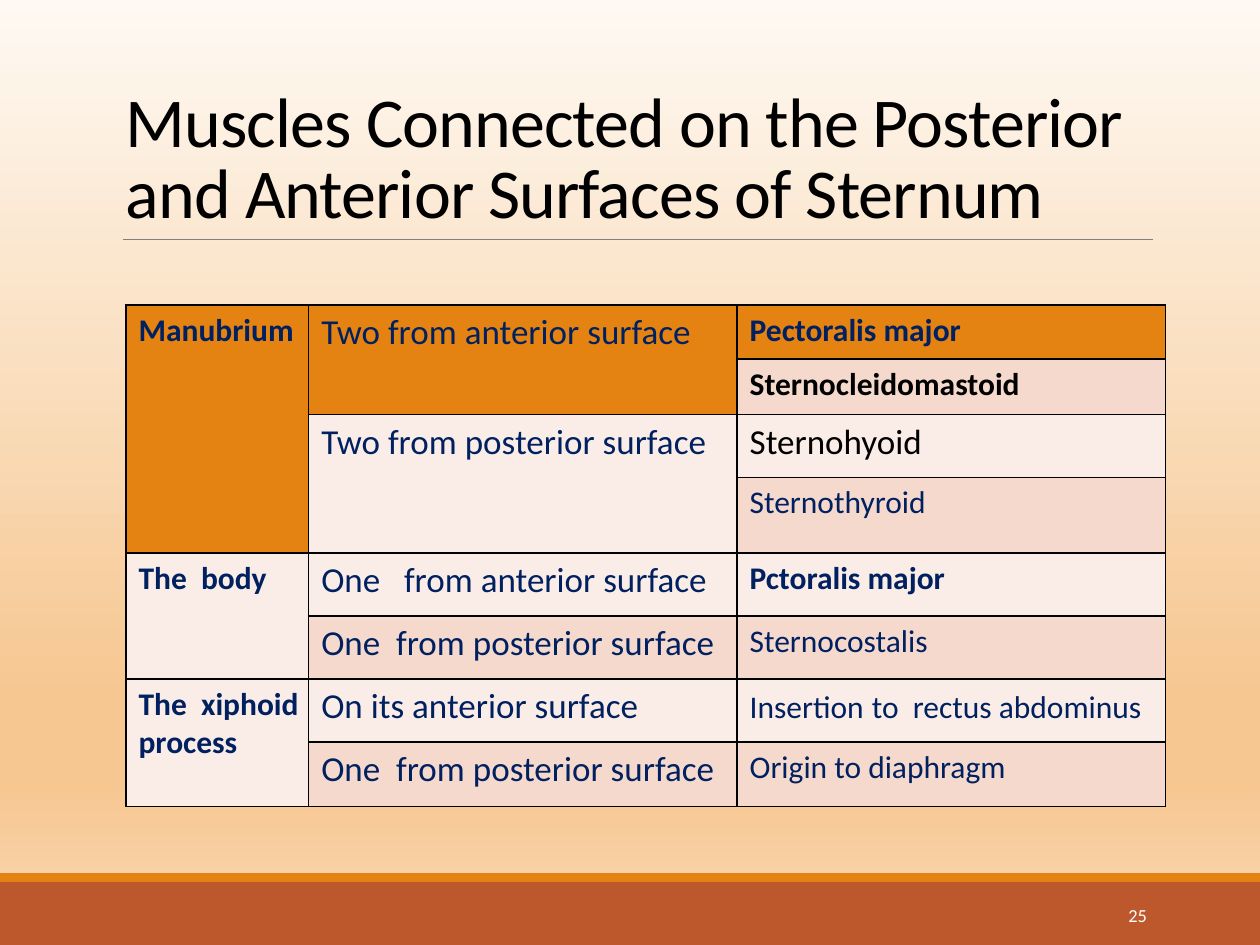
"""Build the slide on the muscles attached to the sternum."""
from pptx import Presentation
from pptx.dml.color import RGBColor as RGB
from pptx.enum.shapes import MSO_CONNECTOR as Link, MSO_SHAPE as Shape
from pptx.enum.text import MSO_ANCHOR as Anchor, PP_ALIGN as Align
from pptx.oxml import parse_xml
from pptx.oxml.ns import nsdecls
from pptx.util import Inches, Pt

NAVY = RGB(0x00, 0x20, 0x60)
BLACK = RGB(0, 0, 0)
WHITE = RGB(255, 255, 255)
GRAY = RGB(0x80, 0x80, 0x80)
RUST = RGB(0xBD, 0x58, 0x2C)
ORANGE = RGB(0xE4, 0x83, 0x12)
PALE = RGB(0xFA, 0xED, 0xE7)
PINK = RGB(0xF5, 0xD9, 0xCC)
FONT = "Calibri"
WIDE, HIGH = 10, 7.5

STOPS = [(0, "FEF9F3"), (74, "F6C791"), (83, "F6C791"), (100, "F9DAB6")]
TITLE = "Muscles Connected on the Posterior and Anterior Surfaces of Sternum"
NUMBER = "25"
BANDS = [(7, 0.5, RUST), (6.93, 0.07, ORANGE)]
COLS = [1.45, 3.4, 3.4]
ROWS = [0.43, 0.44, 0.5, 0.6, 0.5, 0.5, 0.5, 0.51]

PARTS = [
    (0, 4, ORANGE, True, NAVY, [("Manubrium", 18)]),
    (4, 2, PALE, True, NAVY, [("The  body", 18)]),
    (6, 2, PALE, True, NAVY, [("The  xiphoid process", 18)]),
]
SIDES = [
    (0, 2, ORANGE, False, NAVY, [("Two from anterior surface", 20)]),
    (2, 2, PALE, False, NAVY, [("Two from posterior surface", 20)]),
    (4, 1, PALE, False, NAVY, [("One   from anterior surface", 20)]),
    (5, 1, PINK, False, NAVY, [("One  from posterior surface", 20)]),
    (6, 1, PALE, False, NAVY, [("On its anterior surface", 20)]),
    (7, 1, PINK, False, NAVY, [("One  from posterior surface", 20)]),
]
MUSCLES = [
    (0, 1, ORANGE, True, NAVY, [("Pectoralis major", 18)]),
    (1, 1, PINK, True, BLACK, [("Sternocleidomastoid", 18)]),
    (2, 1, PALE, False, BLACK, [("Sternohyoid", 20)]),
    (3, 1, PINK, False, NAVY, [("Sternothyroid", 18)]),
    (4, 1, PALE, True, NAVY, [("Pctoralis major", 18)]),
    (5, 1, PINK, False, NAVY, [("Sternocostalis", 18)]),
    (6, 1, PALE, False, NAVY,
     [("Insertion", 18), (" ", 20), ("to  rectus abdominus", 18)]),
    (7, 1, PINK, False, NAVY, [("Origin to diaphragm", 18)]),
]


def box(*sides):
    return [Inches(side) for side in sides]


def add_run(para, text, size, color, bold=False):
    run = para.add_run()
    run.text = text
    font = run.font
    font.name, font.size, font.bold = FONT, Pt(size), bold
    font.color.rgb = color
    return run


def add_text(slide, place, anchor):
    frame = slide.shapes.add_textbox(*box(*place)).text_frame
    frame.word_wrap = True
    frame.vertical_anchor = anchor
    return frame.paragraphs[0]


def paint_back(slide):
    fill = slide.background.fill
    fill.gradient()
    fill.gradient_angle = 270
    stops = slide.element.xpath(".//a:gsLst")[0]
    for old in list(stops):
        stops.remove(old)
    for share, color in STOPS:
        stops.append(parse_xml(
            f'<a:gs {nsdecls("a")} pos="{share * 1000}">'
            f'<a:srgbClr val="{color}"/></a:gs>'))


def add_frame(slide):
    for top, high, color in BANDS:
        band = slide.shapes.add_shape(Shape.RECTANGLE, *box(0, top, WIDE, high))
        band.shadow.inherit = False
        band.fill.solid()
        band.fill.fore_color.rgb = color
        band.line.fill.background()
    rule = slide.shapes.add_connector(Link.STRAIGHT, *box(0.98, 1.9, 9.15, 1.9))
    rule.line.color.rgb, rule.line.width = GRAY, Pt(0.5)
    rule.element.spPr.append(parse_xml(f'<a:effectLst {nsdecls("a")}/>'))


def add_edges(cell):
    props = cell._tc.get_or_add_tcPr()
    for spot, side in enumerate(("lnL", "lnR", "lnT", "lnB")):
        props.insert(spot, parse_xml(
            f'<a:{side} {nsdecls("a")} w="{Pt(1)}"><a:solidFill>'
            f'<a:srgbClr val="{BLACK}"/></a:solidFill></a:{side}>'))


def add_grid(slide):
    grid = slide.shapes.add_table(
        len(ROWS), len(COLS), *box(1, 2.42, sum(COLS), sum(ROWS))).table
    for col, wide in zip(grid.columns, COLS):
        col.width = Inches(wide)
    for row, high in zip(grid.rows, ROWS):
        row.height = Inches(high)
    for col, items in enumerate((PARTS, SIDES, MUSCLES)):
        for top, span, color, bold, ink, runs in items:
            for row in range(top, top + span):
                part = grid.cell(row, col)
                part.fill.solid()
                part.fill.fore_color.rgb = color
                add_edges(part)
            cell = grid.cell(top, col)
            if span > 1:
                cell.merge(grid.cell(top + span - 1, col))
            if col == 0:
                cell.margin_right = Inches(0.05)
            for text, size in runs:
                add_run(cell.text_frame.paragraphs[0], text, size, ink, bold)


def main():
    deck = Presentation()
    deck.slide_width, deck.slide_height = box(WIDE, HIGH)
    slide = deck.slides.add_slide(deck.slide_layouts[6])
    paint_back(slide)
    add_frame(slide)
    title = add_text(slide, (0.9, 0.31, 8.25, 1.59), Anchor.BOTTOM)
    title.line_spacing = 0.85
    run = add_run(title, TITLE, 40, BLACK)
    run.font._element.set("spc", "-50")
    add_grid(slide)
    page = add_text(slide, (8.12, 7.06, 1.08, 0.4), Anchor.MIDDLE)
    page.alignment = Align.RIGHT
    add_run(page, NUMBER, 10.5, WHITE)
    deck.save("out.pptx")


if __name__ == "__main__":
    main()
